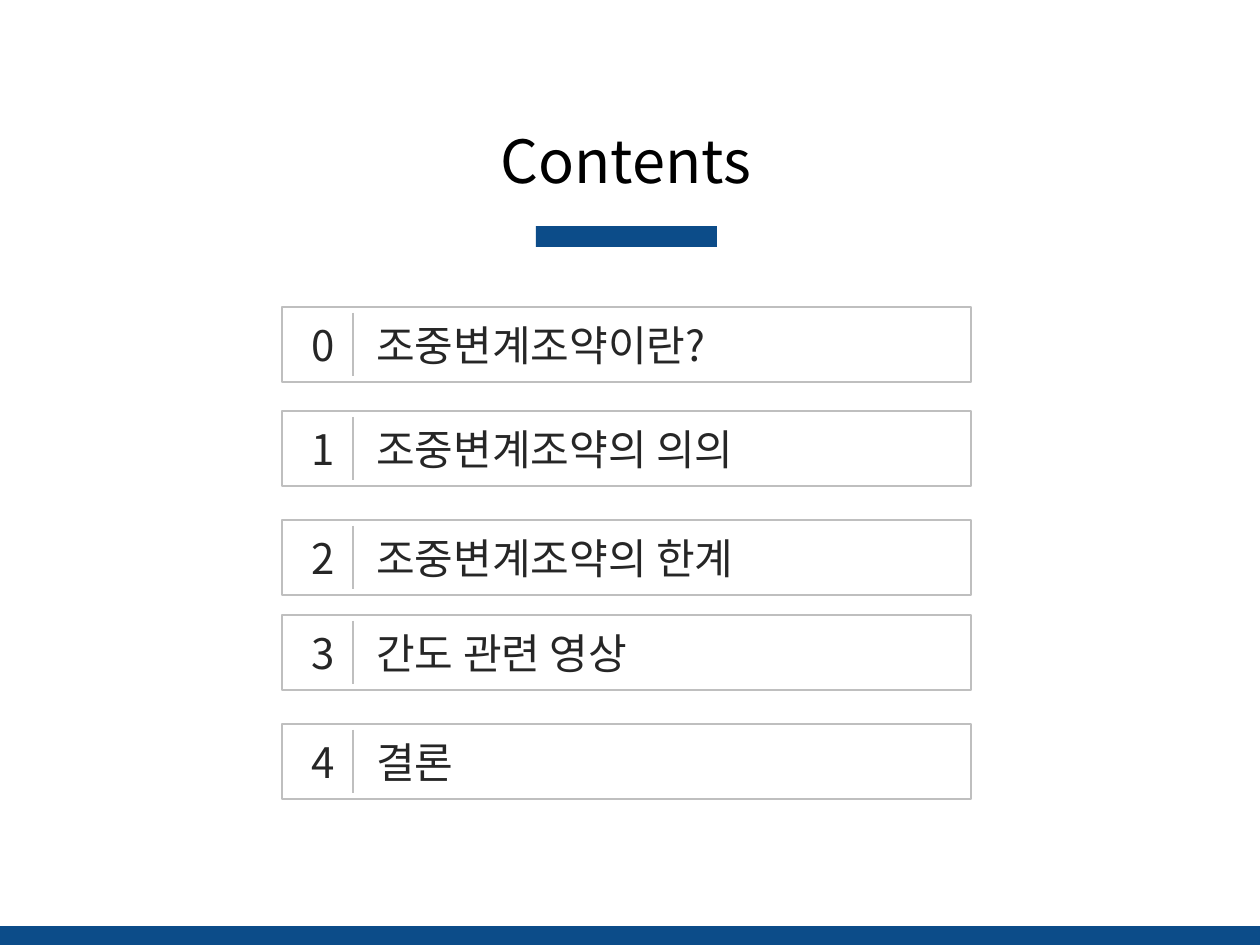
from dataclasses import dataclass

from pptx import Presentation
from pptx.dml.color import RGBColor as RGB
from pptx.enum.shapes import MSO_CONNECTOR as LINE, MSO_SHAPE as SHAPE
from pptx.enum.text import MSO_ANCHOR as ANCHOR, MSO_AUTO_SIZE as FIT, PP_ALIGN as ALIGN
from pptx.oxml.ns import qn
from pptx.util import Emu, Pt
from lxml.etree import SubElement


@dataclass(frozen=True)
class Theme:
    font: str = "Noto Sans CJK KR"
    blue: RGB = RGB(0x0C, 0x4C, 0x89)
    gray: RGB = RGB(0xBF, 0xBF, 0xBF)
    black: RGB = RGB(0, 0, 0)
    ink: RGB = RGB(0x26, 0x26, 0x26)
    head: int = 34
    body: int = 24
    rule: int = 1


def px(n):
    return Emu(round(n * 914400 / 126))


class Deck:
    """Builds slides in one style, with lengths in px."""

    def __init__(self, theme, wide, high):
        self.theme = theme
        self.file = Presentation()
        self.file.slide_width, self.file.slide_height = px(wide), px(high)

    def start(self):
        self.slide = self.file.slides.add_slide(self.file.slide_layouts[5])

    def label(self, box, words, size, color, align):
        frame = box.text_frame
        frame.text = words
        frame.word_wrap = True
        frame.auto_size = FIT.NONE
        frame.vertical_anchor = ANCHOR.TOP
        para = frame.paragraphs[0]
        para.alignment = align
        font = para.font
        font.size, font.name = Pt(size), self.theme.font
        font.color.rgb = color
        props = para._p.pPr.find(qn("a:defRPr"))
        SubElement(props, qn("a:ea")).set("typeface", self.theme.font)

    def title(self, words, *area):
        box = self.slide.shapes.title
        box.left, box.top, box.width, box.height = map(px, area)
        self.label(box, words, self.theme.head, self.theme.black, ALIGN.CENTER)

    def text(self, words, *area, align=ALIGN.LEFT):
        box = self.slide.shapes.add_textbox(*map(px, area))
        self.label(box, words, self.theme.body, self.theme.ink, align)

    def rect(self, *area):
        box = self.slide.shapes.add_shape(SHAPE.RECTANGLE, *map(px, area))
        box.shadow.inherit = False
        return box

    def bar(self, *area):
        box = self.rect(*area)
        box.fill.solid()
        box.fill.fore_color.rgb = self.theme.blue
        box.line.fill.background()

    def frame(self, *area):
        box = self.rect(*area)
        box.fill.background()
        self.stroke(box.line)

    def rule(self, *ends):
        link = self.slide.shapes.add_connector(LINE.STRAIGHT, *map(px, ends))
        self.stroke(link.line)
        SubElement(link._element.spPr, qn("a:effectLst"))

    def stroke(self, line):
        line.color.rgb = self.theme.gray
        line.width = Pt(self.theme.rule)

    def item(self, num, words, top):
        inner = top + 6
        self.frame(282, top, 689, 75)
        self.rule(353, inner, 353, inner + 63)
        self.text(str(num), 299, inner, 38, 78, align=ALIGN.CENTER)
        self.text(words, 364, inner, 578, 78)


def main():
    items = [
        ("조중변계조약이란?", 307),
        ("조중변계조약의 의의", 411),
        ("조중변계조약의 한계", 520),
        ("간도 관련 영상", 615),
        ("결론", 724),
    ]
    deck = Deck(Theme(), 1260, 945)
    deck.start()
    deck.title("Contents", 407, 118, 438, 106)
    deck.bar(536, 226, 181, 21)
    for num, (words, top) in enumerate(items):
        deck.item(num, words, top)
    deck.bar(0, 926, 1260, 19)
    deck.file.save("out.pptx")


if __name__ == "__main__":
    main()
